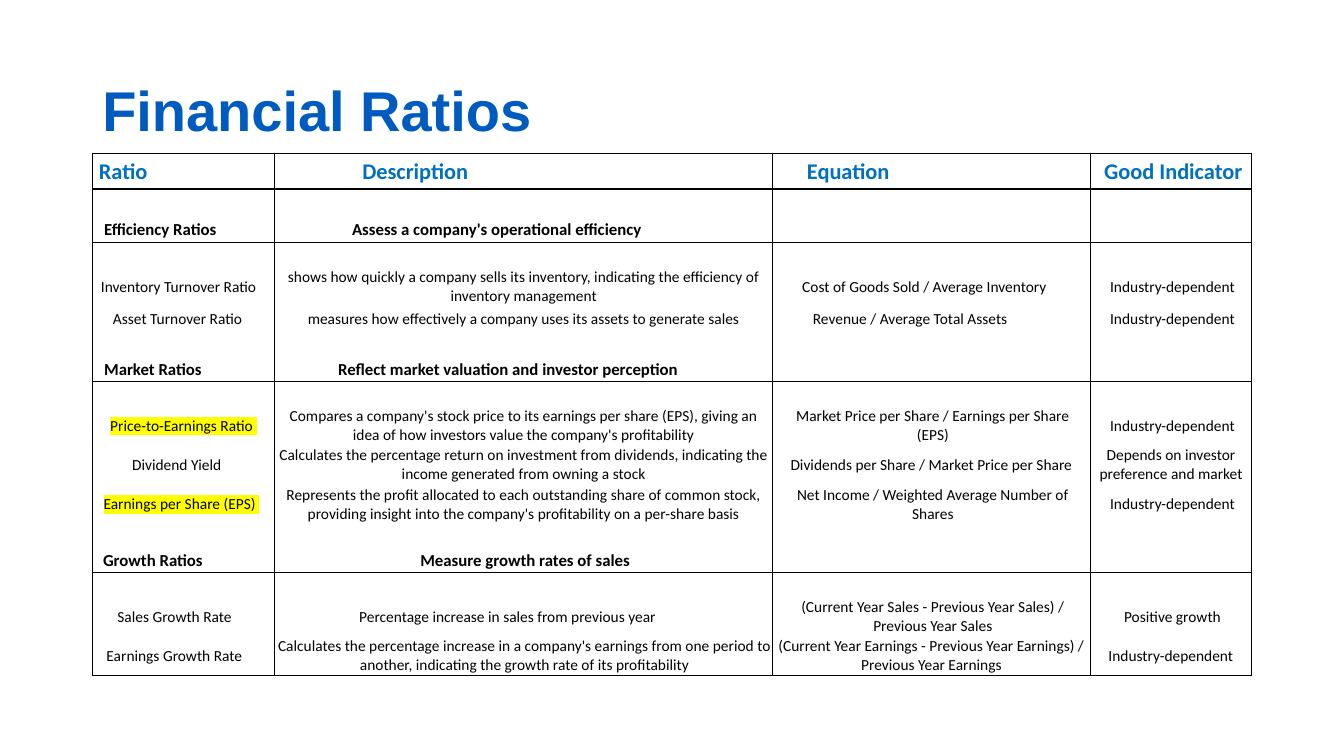
from lxml import etree
from pptx import Presentation
from pptx.dml.color import RGBColor
from pptx.enum.text import MSO_ANCHOR, PP_ALIGN
from pptx.oxml.ns import qn
from pptx.util import Pt

CENTER, RIGHT = PP_ALIGN.CENTER, PP_ALIGN.RIGHT
MIDDLE = MSO_ANCHOR.MIDDLE
TITLE_BLUE = RGBColor(0x00, 0x5B, 0xC0)
HEADER_BLUE = RGBColor(0x00, 0x70, 0xC0)
BLACK = RGBColor(0, 0, 0)
YELLOW = RGBColor(0xFF, 0xFF, 0x00)
NBSP = " "

STYLES = {
    "header": dict(size=Pt(16), bold=True, color=HEADER_BLUE),
    "section": dict(size=Pt(12), bold=True, color=BLACK),
    "ratio": dict(size=Pt(11), bold=False, color=BLACK),
}
COLUMN_WIDTHS = (130.3, 355.7, 226.8, 115.2)
GAP = (17.5, "ratio", ("", "", "", ""))
HIGHLIGHTED = ("Price-to-Earnings Ratio", "Earnings per Share (EPS)")
INDUSTRY = ("Industry-dependent", 3, 0.7)

ROWS = [
    (25.5, "header", (("Ratio", 0.7, 87), ("Description", 4, 159),
                      ("Equation", 4, 123), ("Good Indicator", 4, 0.7))),
    (19, "ratio", ("", "", "", "")),
    (19, "section", (("Efficiency Ratios", 0.7, 34),
                     ("Assess a company's operational efficiency", 2.7, 41), "", "")),
    GAP,
    (28, "ratio", (("Inventory Turnover Ratio", 0.7, 13.2),
                   "shows how quickly a company sells its inventory, indicating the "
                   "efficiency of inventory management",
                   ("Cost of Goods Sold / Average Inventory", 2.5, 12.5), INDUSTRY)),
    (19, "ratio", (("Asset Turnover Ratio", 0.7, 23.2),
                   "measures how effectively a company uses its assets to generate sales",
                   ("Revenue / Average Total Assets", 2.5, 33), INDUSTRY)),
    GAP,
    (17.5, "section", (("Market Ratios", 0.7, 44.5),
                       ("Reflect market valuation and investor perception", 2.7, 25), "", "")),
    GAP,
    (28, "ratio", (("Price-to-Earnings Ratio", 0.7, 13),
                   "Compares a company's stock price to its earnings per share (EPS), "
                   "giving an idea of how investors value the company's profitability",
                   ("Market Price per Share / Earnings per Share (EPS)", 6, 4), INDUSTRY)),
    (28, "ratio", (("Dividend Yield", 0.7, 38.2),
                   "Calculates the percentage return on investment from dividends, "
                   "indicating the income generated from owning a stock",
                   "Dividends per Share / Market Price per Share",
                   ("Depends on investor preference and market", 1, 0.7))),
    (28, "ratio", (("Earnings per Share (EPS)", 0.7, 11),
                   "Represents the profit allocated to each outstanding share of common "
                   "stock, providing insight into the company's profitability on a per-share basis",
                   ("Net Income / Weighted Average Number of Shares", 6, 4), INDUSTRY)),
    GAP,
    (17.5, "section", (("Growth Ratios", 0.7, 44.5),
                       ("Measure growth rates of sales", 2.7, 0.7), "", "")),
    GAP,
    (28, "ratio", (("Sales Growth Rate", 0.7, 30.7),
                   ("Percentage increase in sales from previous year", 2.5, 25.5),
                   ("(Current Year Sales - Previous Year Sales) / Previous Year Sales", 4, 2),
                   ("Positive growth", 3, 0.7))),
    (28, "ratio", (("Earnings Growth Rate", 0.7, 23.2),
                   ("Calculates the percentage increase in a company's earnings from one "
                    "period to another, indicating the growth rate of its profitability", 2, 0.7),
                   "(Current Year Earnings - Previous Year Earnings) / Previous Year Earnings",
                   "Industry-dependent")),
]
RULED = {0, 1, len(ROWS)} | {i + 1 for i, row in enumerate(ROWS) if row[1] == "section"}


def add_run(p, text, size, bold, color, name="Calibri", highlight=None):
    r = p.add_run()
    r.text = text
    r.font.color.rgb = color
    if highlight is not None:
        mark = etree.SubElement(r.font._element, qn("a:highlight"))
        etree.SubElement(mark, qn("a:srgbClr"), val=str(highlight))
    for key, value in dict(size=size, bold=bold, name=name).items():
        setattr(r.font, key, value)


def set_border(cell, side, visible):
    ln = etree.SubElement(cell._tc.get_or_add_tcPr(), qn("a:ln" + side), w=str(Pt(1)))
    if visible:
        fill = etree.SubElement(ln, qn("a:solidFill"))
        etree.SubElement(fill, qn("a:srgbClr"), val=str(BLACK))
    else:
        etree.SubElement(ln, qn("a:noFill"))


def fill_cell(cell, content, style, align):
    text, left, right = (content, 0.7, 0.7) if isinstance(content, str) else content
    layout = dict(margin_left=Pt(left), margin_right=Pt(right), margin_top=Pt(0.7),
                  margin_bottom=Pt(0), vertical_anchor=MIDDLE)
    for key, value in layout.items():
        setattr(cell, key, value)
    p = cell.text_frame.paragraphs[0]
    p.alignment = align
    if not text:
        p._p.get_or_add_endParaRPr().set("sz", "1100")
    elif text in HIGHLIGHTED:
        add_run(p, text + NBSP, highlight=YELLOW, **STYLES[style])
    else:
        add_run(p, text, **STYLES[style])


def add_title(s, left, top, width, height):
    tf = s.shapes.add_textbox(Pt(left), Pt(top), Pt(width), Pt(height)).text_frame
    tf.word_wrap = True
    tf.vertical_anchor = MIDDLE
    p = tf.paragraphs[0]
    p.line_spacing = 0.9
    add_run(p, "Financial Ratios", Pt(40), True, TITLE_BLUE, "Arial")


def add_ratio_table(s, left, top, width, height):
    table = s.shapes.add_table(len(ROWS), len(COLUMN_WIDTHS), Pt(left), Pt(top),
                               Pt(width), Pt(height)).table
    table.first_row = table.horz_banding = False
    for column, column_width in zip(table.columns, COLUMN_WIDTHS):
        column.width = Pt(column_width)
    for i, (row_height, style, contents) in enumerate(ROWS):
        table.rows[i].height = Pt(row_height)
        for j, content in enumerate(contents):
            cell = table.cell(i, j)
            fill_cell(cell, content, style, RIGHT if style == "ratio" and j == 0 else CENTER)
            sides = dict(L=True, R=True, T=i in RULED, B=i + 1 in RULED)
            for side, visible in sides.items():
                set_border(cell, side, visible)
            cell.fill.background()


def main():
    prs = Presentation()
    prs.slide_width, prs.slide_height = Pt(960), Pt(540)
    s = prs.slides.add_slide(prs.slide_layouts[6])
    add_title(s, 66, 28.8, 828, 104.4)
    add_ratio_table(s, 66, 109.5, 828, 373)
    prs.save("out.pptx")


if __name__ == "__main__":
    main()
